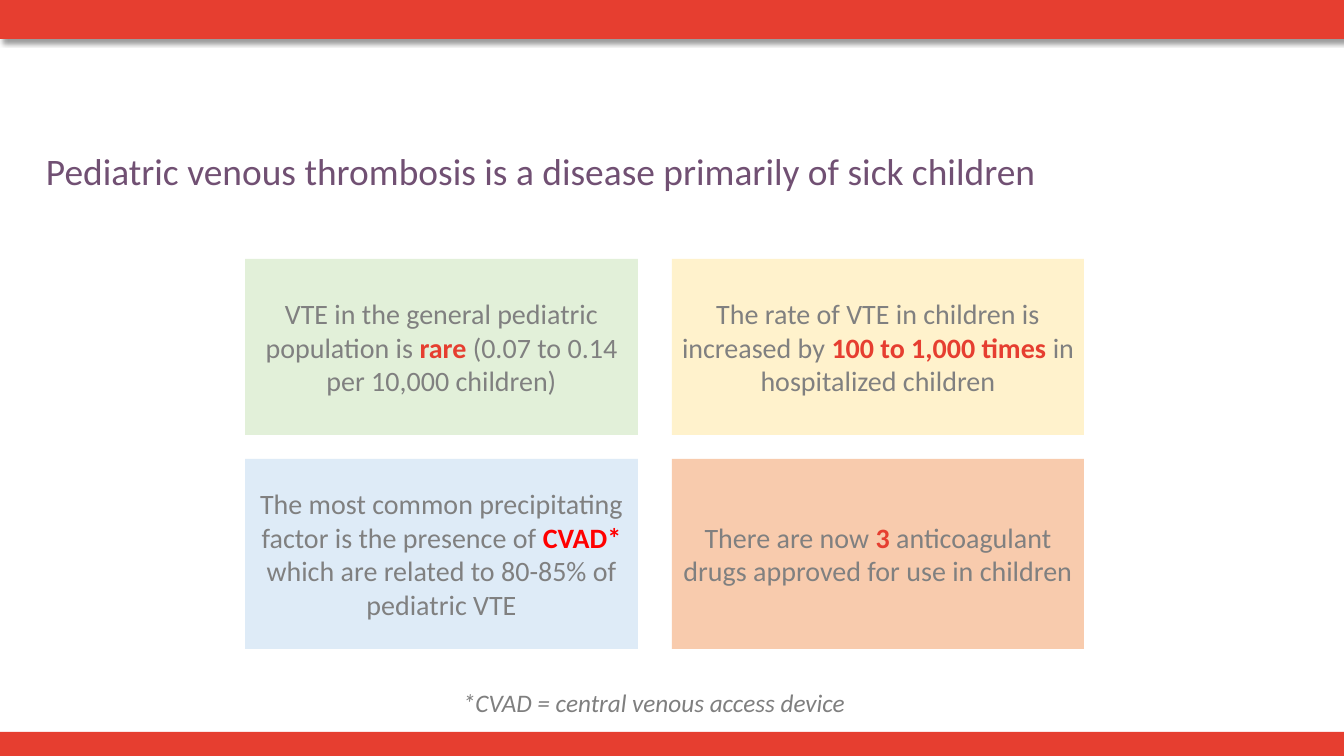
from lxml.etree import SubElement
from pptx import Presentation
from pptx.dml.color import RGBColor
from pptx.enum.shapes import MSO_SHAPE as SHAPE
from pptx.enum.text import MSO_ANCHOR as ANCHOR, MSO_AUTO_SIZE as AUTO, PP_ALIGN as ALIGN
from pptx.oxml.ns import qn
from pptx.util import Pt

PX = 914400 / 100.8
W, H = 1344, 756
RED = RGBColor(0xE6, 0x3E, 0x30)
BRIGHT_RED = RGBColor(0xFF, 0x00, 0x00)
PURPLE = RGBColor(0x71, 0x50, 0x73)
GRAY = RGBColor(0x80, 0x80, 0x80)
NOTE_GRAY = RGBColor(0x7F, 0x7F, 0x7F)
GREEN = RGBColor(0xE2, 0xF0, 0xD9)
YELLOW = RGBColor(0xFF, 0xF2, 0xCC)
BLUE = RGBColor(0xDE, 0xEB, 0xF7)
ORANGE = RGBColor(0xF8, 0xCB, 0xAD)

CARDS = [
    [(GREEN, "VTE in the general pediatric population is ", "rare", RED,
      " (0.07 to 0.14 per 10,000 children)"),
     (YELLOW, "The rate of VTE in children is increased by ", "100 to 1,000 times ", RED,
      "in hospitalized children")],
    [(BLUE, "The most common precipitating factor is the presence of ", "CVAD*", BRIGHT_RED,
      " which are related to 80-85% of pediatric VTE"),
     (ORANGE, "There are now ", "3", RED, " anticoagulant drugs approved for use in children")],
]


def emu(*lengths):
    """Turn px lengths into EMU."""
    return [round(n * PX) for n in lengths]


def add_run(p, text, size=20, color=GRAY, bold=False, italic=False):
    """Append a formatted run to a paragraph."""
    r = p.add_run()
    r.text = text
    f = r.font
    f.name, f.size, f.bold, f.italic = "Calibri", Pt(size), bold, italic
    f.color.rgb = color


def add_rect(s, x, y, w, h, fill):
    """Add a plain filled rectangle."""
    sp = s.shapes.add_shape(SHAPE.RECTANGLE, *emu(x, y, w, h))
    sp.shadow.inherit = False
    sp.fill.solid()
    sp.fill.fore_color.rgb = fill
    sp.line.fill.background()
    return sp


def add_shadow(sp):
    """Give a shape a soft diagonal shadow."""
    effects = sp._element.spPr.find(qn("a:effectLst"))
    shadow = SubElement(effects, qn("a:outerShdw"), blurRad=str(Pt(4)), dist=str(Pt(3)),
                        dir="2700000", algn="tl", rotWithShape="0")
    color = SubElement(shadow, qn("a:srgbClr"), val="000000")
    SubElement(color, qn("a:alpha"), val="40000")


def add_bars(s):
    """Draw the red bars along the bottom and top edges."""
    add_rect(s, 0, H - 24, W, 24, RED)
    add_shadow(add_rect(s, 0, -1, W, 40, RED))


def add_title(s, x, y, w, h):
    """Place the slide title without insets."""
    tf = s.shapes.add_textbox(*emu(x, y, w, h)).text_frame
    tf.word_wrap = True
    tf.margin_left = tf.margin_right = tf.margin_top = tf.margin_bottom = 0
    add_run(tf.paragraphs[0],
            "Pediatric venous thrombosis is a disease primarily of sick children",
            size=26.7, color=PURPLE)


def add_card(s, x, y, w, h, fill, before, key, key_color, after):
    """Draw one fact card with a highlighted key phrase."""
    tf = add_rect(s, x, y, w, h, fill).text_frame
    tf.word_wrap = True
    tf.vertical_anchor = ANCHOR.MIDDLE
    p = tf.paragraphs[0]
    p.alignment = ALIGN.CENTER
    add_run(p, before)
    add_run(p, key, color=key_color, bold=True)
    add_run(p, after)


def add_cards(s, x, y, widths=(393, 412), heights=(176, 190), gap_x=34, gap_y=24):
    """Lay the fact cards out in a grid from its top left corner."""
    for row, h in zip(CARDS, heights):
        left = x
        for card, w in zip(row, widths):
            add_card(s, left, y, w, h, *card)
            left += w + gap_x
        y += h + gap_y


def add_footnote(s, x, y, w, h):
    """Place the centred abbreviation note."""
    tf = s.shapes.add_textbox(*emu(x, y, w, h)).text_frame
    tf.word_wrap = True
    tf.auto_size = AUTO.SHAPE_TO_FIT_TEXT
    p = tf.paragraphs[0]
    p.alignment = ALIGN.CENTER
    add_run(p, "*CVAD = central venous access device", size=18, color=NOTE_GRAY, italic=True)


def main():
    """Build and save the slide."""
    prs = Presentation()
    prs.slide_width, prs.slide_height = emu(W, H)
    s = prs.slides.add_slide(prs.slide_layouts[6])
    add_bars(s)
    add_title(s, 46, 148, 1210, 79)
    add_cards(s, 245, 259)
    add_footnote(s, 448, 682, 412, 40)
    prs.save("out.pptx")


if __name__ == "__main__":
    main()
